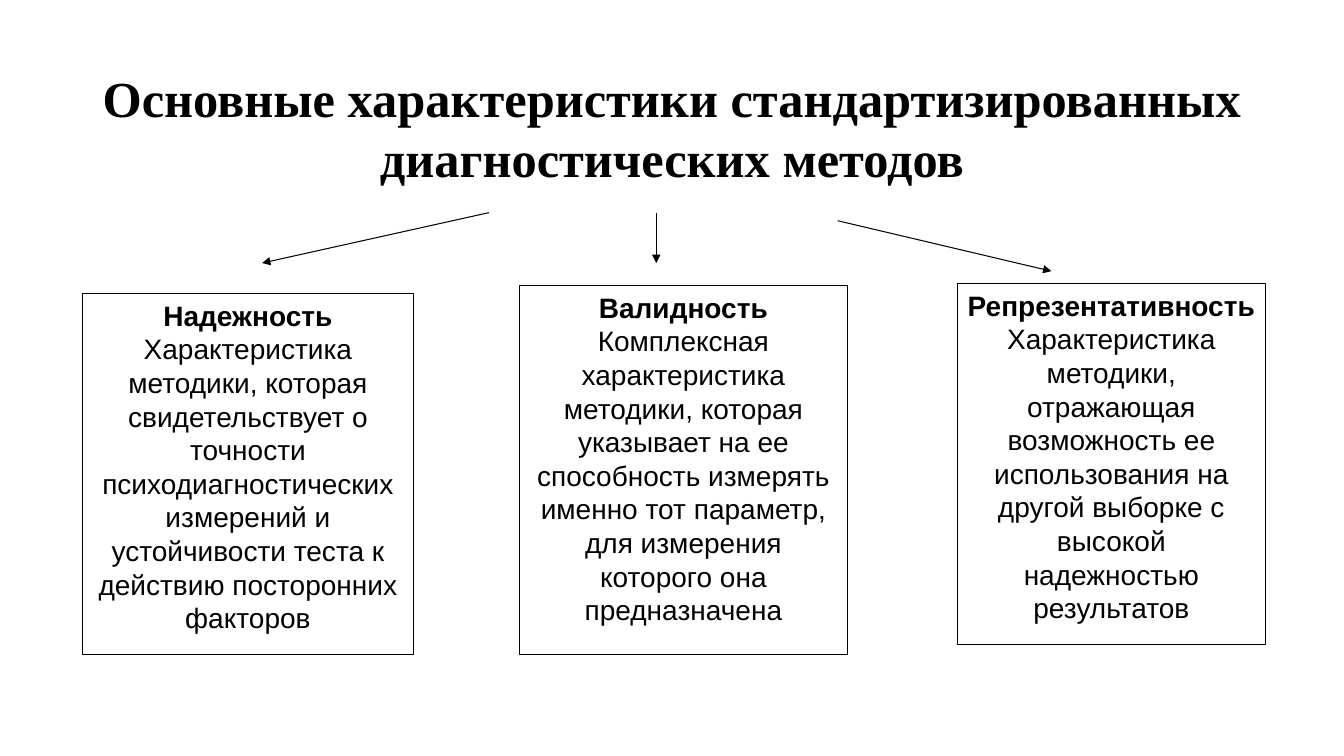
from dataclasses import dataclass

from lxml import etree
from pptx import Presentation
from pptx.dml.color import RGBColor
from pptx.enum.shapes import MSO_CONNECTOR, MSO_SHAPE
from pptx.enum.text import MSO_ANCHOR, PP_ALIGN
from pptx.oxml.ns import qn
from pptx.util import Inches, Pt

RECT = MSO_SHAPE.RECTANGLE
STRAIGHT = MSO_CONNECTOR.STRAIGHT
TOP, MIDDLE = MSO_ANCHOR.TOP, MSO_ANCHOR.MIDDLE
CENTER = PP_ALIGN.CENTER


@dataclass(frozen=True)
class Theme:
    ink: RGBColor = RGBColor(0, 0, 0)
    paper: RGBColor = RGBColor(255, 255, 255)
    title_font: str = "Times New Roman"
    body_font: str = "Arial"
    title_size: int = 36
    body_size: int = 20
    line_width: float = 0.75


class Board:
    def __init__(self, prs, theme):
        self.prs = prs
        self.theme = theme
        self.slide = prs.slides.add_slide(prs.slide_layouts[6])
        fill = self.slide.background.fill
        fill.solid()
        fill.fore_color.rgb = theme.paper

    def x(self, percent):
        return round(self.prs.slide_width * percent / 100)

    def y(self, percent):
        return round(self.prs.slide_height * percent / 100)

    def area(self, left, top, width, height):
        return self.x(left), self.y(top), self.x(width), self.y(height)

    def frame(self, sp, anchor):
        tf = sp.text_frame
        tf.word_wrap = True
        tf.vertical_anchor = anchor
        tf.margin_left = tf.margin_right = Inches(0.09)
        return tf

    def add_text(self, p, text, font, size, bold):
        p.alignment = CENTER
        r = p.add_run()
        r.text = text
        r.font.name = font
        r.font.size = Pt(size)
        r.font.bold = bold
        r.font.color.rgb = self.theme.ink

    def stroke(self, line):
        line.color.rgb = self.theme.ink
        line.width = Pt(self.theme.line_width)

    def title(self, text, area):
        sp = self.slide.shapes.add_textbox(*self.area(*area))
        tf = self.frame(sp, MIDDLE)
        self.add_text(tf.paragraphs[0], text, self.theme.title_font,
                      self.theme.title_size, True)

    def card(self, heading, text, area):
        sp = self.slide.shapes.add_shape(RECT, *self.area(*area))
        sp.shadow.inherit = False
        sp.fill.solid()
        sp.fill.fore_color.rgb = self.theme.paper
        self.stroke(sp.line)
        tf = self.frame(sp, TOP)
        font, size = self.theme.body_font, self.theme.body_size
        self.add_text(tf.paragraphs[0], heading, font, size, True)
        self.add_text(tf.add_paragraph(), text, font, size, False)

    def arrow(self, x1, y1, x2, y2):
        sp = self.slide.shapes.add_connector(
            STRAIGHT, self.x(x1), self.y(y1), self.x(x2), self.y(y2))
        self.stroke(sp.line)
        props = sp._element.spPr
        etree.SubElement(props.find(qn("a:ln")), qn("a:tailEnd"),
                         type="triangle")
        etree.SubElement(props, qn("a:effectLst"))


TITLE = "Основные характеристики стандартизированных диагностических методов"
CARDS = [
    ("Надежность",
     "Характеристика методики, которая свидетельствует о точности "
     "психодиагностических измерений и устойчивости теста к действию "
     "посторонних факторов",
     (6.15, 38.8, 24.6, 47.73)),
    ("Валидность",
     "Комплексная характеристика методики, которая указывает на ее "
     "способность измерять именно тот параметр, для измерения которого "
     "она предназначена",
     (38.63, 37.73, 24.45, 48.8)),
    ("Репрезентативность",
     "Характеристика методики, отражающая возможность ее использования "
     "на другой выборке с высокой надежностью результатов",
     (71.25, 37.47, 22.88, 47.73)),
]
ARROWS = [(36.38, 28.13, 19.5), (48.83, 28.13, 48.83), (62.33, 29.2, 78.23)]
ARROW_DROP = 6.67


def main():
    prs = Presentation()
    prs.slide_width, prs.slide_height = Inches(13.33), Inches(7.5)
    board = Board(prs, Theme())
    board.title(TITLE, (5, 8.53, 90, 16.67))
    for heading, text, area in CARDS:
        board.card(heading, text, area)
    for start, top, end in ARROWS:
        board.arrow(start, top, end, top + ARROW_DROP)
    prs.save("out.pptx")


if __name__ == "__main__":
    main()
